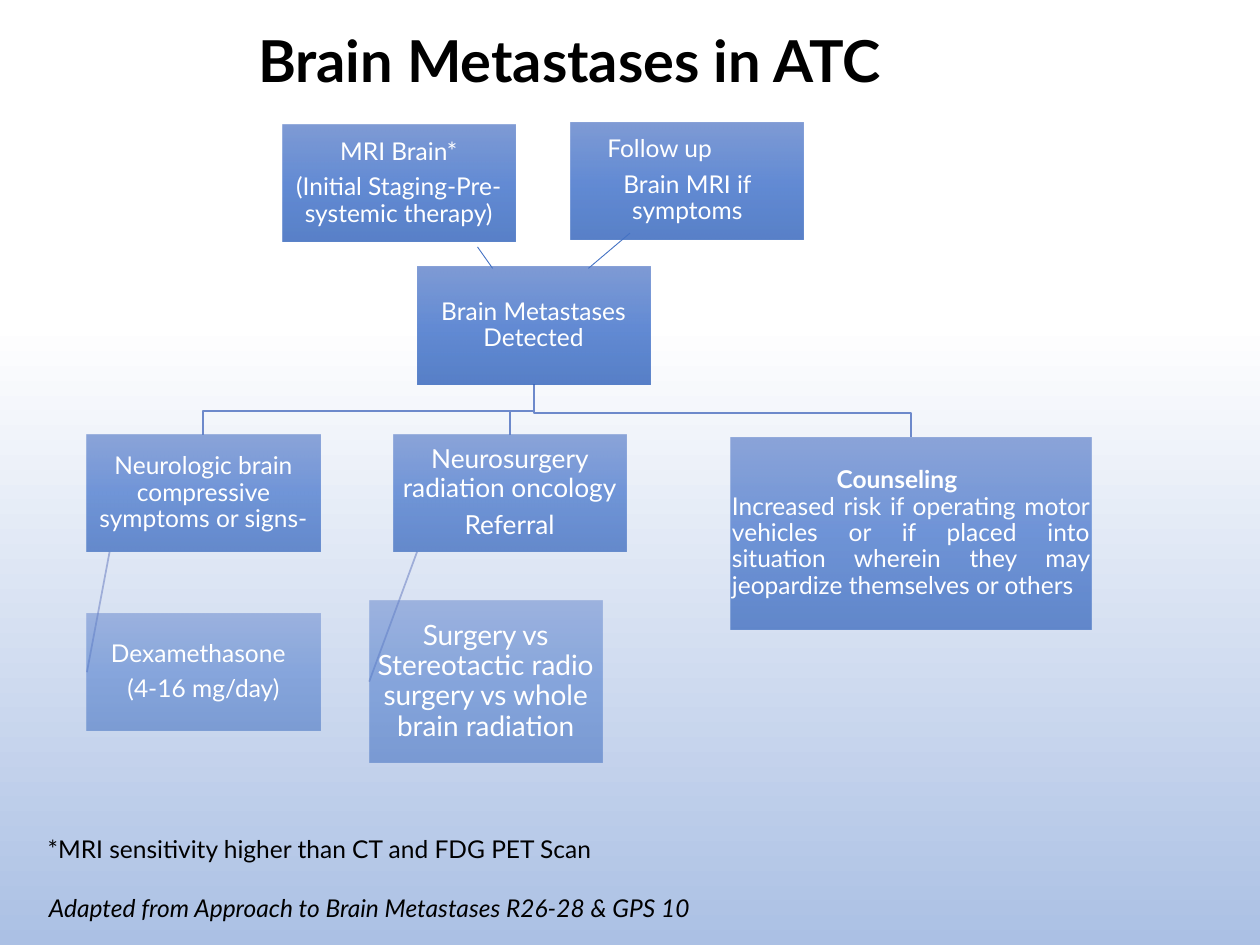
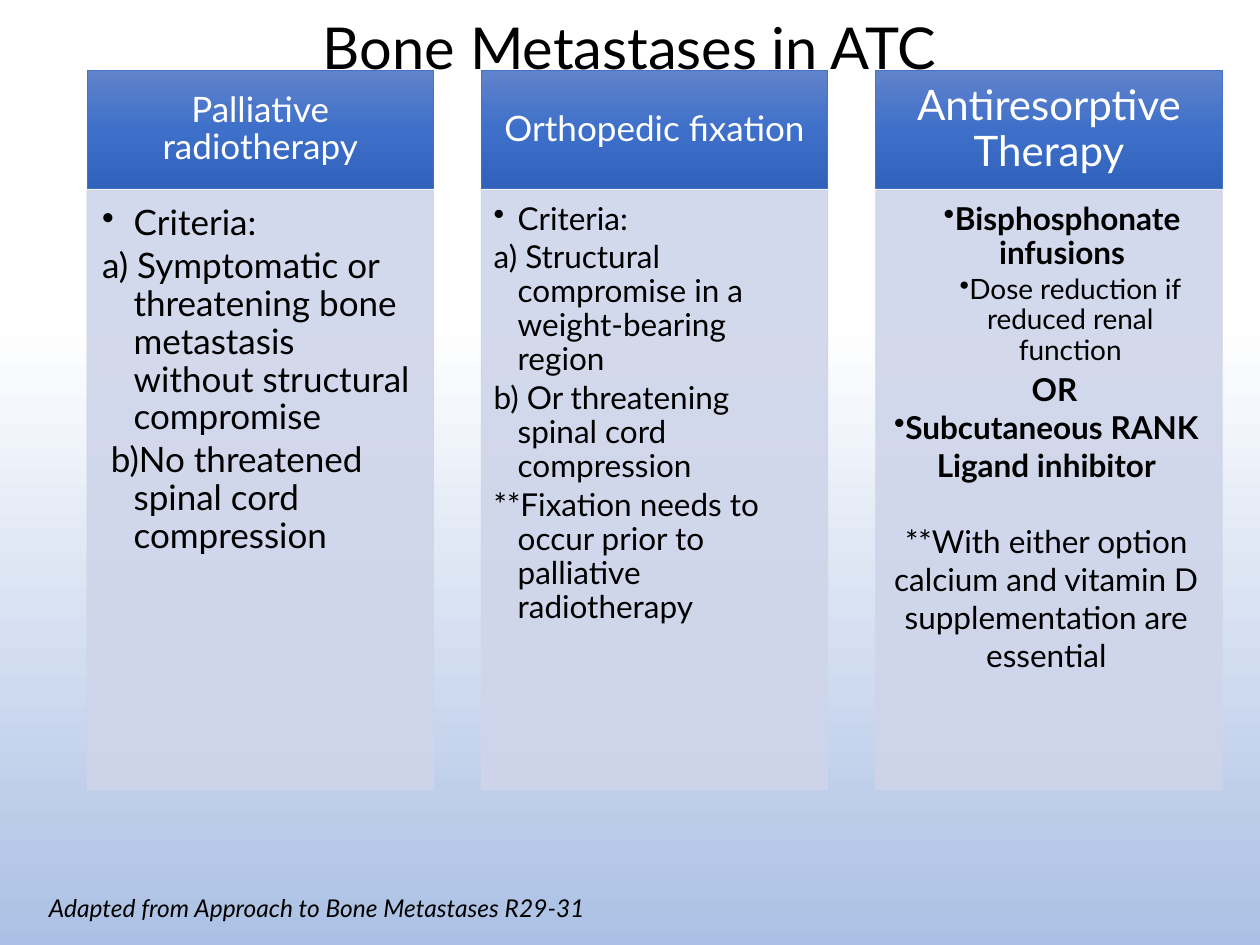
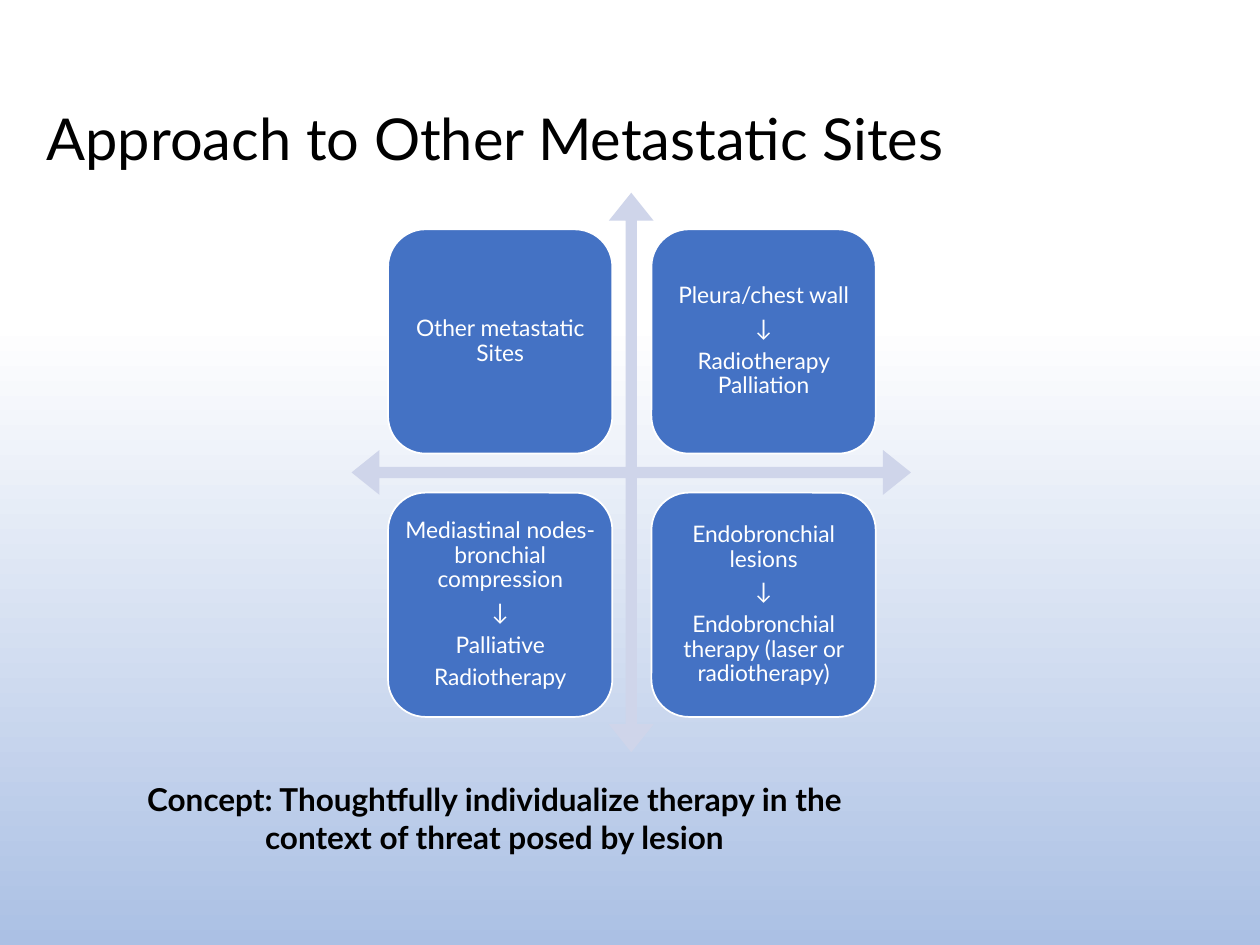
"""Build three slides on managing brain, bone and other metastases in ATC."""
from copy import deepcopy

from pptx import Presentation
from pptx.dml.color import RGBColor
from pptx.enum.shapes import MSO_CONNECTOR, MSO_SHAPE
from pptx.enum.text import MSO_ANCHOR, MSO_AUTO_SIZE, PP_ALIGN
from pptx.oxml.ns import qn
from pptx.oxml.xmlchemy import OxmlElement
from pptx.util import Inches, Pt

BLACK, WHITE, BLUE, PALE = "000000", "FFFFFF", "4472C4", "CFD5EA"
BACKDROP = {0.34: WHITE, 1: "ABC0E4"}
BLUE_FADE = {0: "6183CB", 0.5: "3E70CA", 1: "3062BB"}
BASE = {"alignment": PP_ALIGN.CENTER, "line_spacing": 0.9, "space_before": None,
        "after": 0, "left": 0, "first": 0, "bullet": None,
        "name": "Lato", "size": 14, "bold": False, "italic": False, "colour": WHITE}


def paint(fill, colours, alpha=100):
    """Fill with one hex colour, or with a downward gradient of position: hex."""
    if isinstance(colours, str):
        fill.solid()
        fill.fore_color.rgb = RGBColor.from_string(colours)
    else:
        fill.gradient()
        fill.gradient_angle = 270
        stops = fill._xPr.find(".//" + qn("a:gsLst"))
        while len(stops) < len(colours):
            stops.append(deepcopy(stops[0]))
        for stop, (position, colour) in zip(fill.gradient_stops, colours.items()):
            stop.position = position
            stop.color.rgb = RGBColor.from_string(colour)
    if alpha < 100:
        for colour in fill._xPr.iter(qn("a:srgbClr")):
            opacity = OxmlElement("a:alpha")
            opacity.set("val", str(alpha * 1000))
            colour.append(opacity)


def write(shape, lines, margins=(0.1, 0.05, 0.1, 0.05), anchor=MSO_ANCHOR.MIDDLE, **look):
    """Write paragraphs, each a string or a pair of string and own format."""
    frame = shape.text_frame
    frame.word_wrap = True
    frame.auto_size = MSO_AUTO_SIZE.NONE
    frame.vertical_anchor = anchor
    for side, margin in zip(("left", "top", "right", "bottom"), margins):
        setattr(frame, f"margin_{side}", Inches(margin))
    for number, line in enumerate(lines):
        text, own = line if isinstance(line, tuple) else (line, {})
        style = {**BASE, **look, **own}
        paragraph = frame.add_paragraph() if number else frame.paragraphs[0]
        properties = paragraph._p.get_or_add_pPr()
        properties.set("marL", str(Inches(style["left"])))
        properties.set("indent", str(Inches(style["first"])))
        bullet = OxmlElement("a:buChar" if style["bullet"] else "a:buNone")
        if style["bullet"]:
            bullet.set("char", style["bullet"])
        properties.append(bullet)
        style["space_after"] = Pt(style["after"] * style["size"])
        for name in ("alignment", "line_spacing", "space_before", "space_after"):
            setattr(paragraph, name, style[name])
        run = paragraph.add_run()
        run.text = text
        style["size"] = Pt(style["size"])
        for name in ("name", "size", "bold", "italic"):
            setattr(run.font, name, style[name])
        paint(run.font.fill, style["colour"])


prs = Presentation()
prs.slide_width, prs.slide_height = Inches(10), Inches(7.5)
paint(prs.slide_master.background.fill, BACKDROP)

titles = [
    ("Brain Metastases in ATC", (0.21, 0.09, 8.62, 0.83), {"bold": True}),
    ("Bone Metastases in ATC", (0.69, 0.04, 8.62, 0.72), {}),
    ("Approach to Other Metastatic Sites", (0.27, 0.4, 8.62, 1.45),
     {"alignment": PP_ALIGN.LEFT}),
]
for text, place, look in titles:
    title = prs.slides.add_slide(prs.slide_layouts[5]).shapes.title
    title.left, title.top, title.width, title.height = map(Inches, place)
    write(title, [text], size=33, colour=BLACK, **look)
brain, bone, other = (slide.shapes for slide in prs.slides)

detected_x, detected_bottom = 4.24, 3.05
for x, bend, bottom in [(7.23, 3.28, 3.47), (4.05, 3.26, 3.45), (1.61, 3.26, 3.45)]:
    outline = brain.build_freeform(Inches(detected_x), Inches(detected_bottom))
    corners = [(detected_x, bend), (x, bend), (x, bottom)]
    outline.add_line_segments([(Inches(a), Inches(b)) for a, b in corners], close=False)
    branch = outline.convert_to_shape()
    branch.fill.background()
    branch.shadow.inherit = False
    paint(branch.line.fill, "6D89CB")
    branch.line.width = Pt(1)

steps = [
    ((2.24, 0.99, 1.85, 0.93), 80, 14,
     ["MRI Brain*", "(Initial Staging-Pre-systemic therapy)"]),
    ((4.53, 0.97, 1.85, 0.93), 80, 14,
     [("Follow up", {"alignment": PP_ALIGN.LEFT, "left": 0.28}), "Brain MRI if symptoms"]),
    ((3.31, 2.12, 1.85, 0.93), 80, 14, ["Brain Metastases Detected"]),
    ((0.69, 3.45, 1.85, 0.93), 70, 14,
     ["Neurologic brain compressive symptoms or signs-"]),
    ((0.69, 4.87, 1.85, 0.93), 50, 14,
     [("Dexamethasone", {"alignment": PP_ALIGN.LEFT, "left": 0.18}), "(4-16 mg/day)"]),
    ((3.12, 3.45, 1.85, 0.93), 70, 15, ["Neurosurgery radiation oncology", "Referral"]),
    ((2.93, 4.77, 1.85, 1.28), 50, 16,
     ["Surgery vs Stereotactic radio surgery vs whole brain radiation"]),
    ((5.8, 3.47, 2.86, 1.53), 70, 14,
     [("Counseling", {"alignment": PP_ALIGN.LEFT, "left": 0.83, "bold": True, "after": 0}),
      ("Increased risk if operating motor vehicles or if placed into situation wherein "
       "they may jeopardize themselves or others", {"alignment": PP_ALIGN.JUSTIFY})]),
]
boxes = []
for place, alpha, size, lines in steps:
    box = brain.add_shape(MSO_SHAPE.RECTANGLE, *map(Inches, place))
    box.shadow.inherit = False
    paint(box.fill, BLUE_FADE, alpha)
    box.line.fill.background()
    write(box, lines, (0.01,) * 4, size=size, after=0.35)
    boxes.append(box)

links = [
    ((0.87, 4.38, 0.69, 5.33), "9EADD8", 1, boxes[4]),
    ((3.31, 4.38, 2.93, 5.41), "9EADD8", 1, boxes[6]),
    ((4.67, 2.13, 5, 1.85), BLUE, 0.5, None),
    ((3.79, 1.96, 3.91, 2.13), BLUE, 0.5, None),
]
for ends, colour, width, treatment in links:
    link = brain.add_connector(MSO_CONNECTOR.STRAIGHT, *map(Inches, ends))
    paint(link.line.fill, colour)
    link.line.width = Pt(width)
    link._element.spPr.append(OxmlElement("a:effectLst"))
    if treatment:
        link.end_connect(treatment, 1)
        boxes[0]._element.addprevious(link._element)

wide = {"left": 0.25, "first": -0.25}
narrow = {"left": 0.19, "first": -0.19}
centred = {"alignment": PP_ALIGN.CENTER}
loose = {**centred, "line_spacing": 1, "after": 0}
options = [
    ("Palliative radiotherapy", 20, (0.16, 0.09) * 2, 20, (0.12, 0.12, 0.16, 0.17), [
        ("Criteria:", {**wide, "bullet": "•"}),
        ("a) Symptomatic or threatening bone metastasis without structural compromise", wide),
        ("b)No threatened spinal cord compression", {"left": 0.25, "first": -0.18}),
    ]),
    ("Orthopedic fixation", 20, (0.16, 0.09) * 2, 18, (0.1, 0.1, 0.14, 0.16), [
        ("Criteria:", {**narrow, "bullet": "•"}),
        ("a) Structural compromise in a weight-bearing region", narrow),
        ("b) Or threatening spinal cord compression", narrow),
        ("**Fixation needs to occur prior to palliative radiotherapy", narrow),
    ]),
    ("Antiresorptive Therapy", 24, (0.19, 0.11) * 2, 18, (0.1, 0.1, 0.14, 0.16), [
        ("Bisphosphonate infusions", {**centred, "left": 0.25, "bullet": "•", "bold": True}),
        ("Dose reduction if reduced renal function",
         {**centred, "left": 0.38, "bullet": "•", "size": 16}),
        ("OR", {**loose, "left": 0.13, "bold": True}),
        ("Subcutaneous RANK Ligand inhibitor", {**loose, "bullet": "•", "bold": True}),
        ("**With either option calcium and vitamin D supplementation are essential",
         {**loose, "space_before": Pt(22)}),
    ]),
]
for column, (heading, head_size, head_margins, size, margins, lines) in enumerate(options):
    left = 0.69 + 3.13 * column
    parts = [
        (0.56, 0.94, BLUE_FADE, BLUE, 100, [heading], head_margins,
         {"size": head_size, "after": 0.35}),
        (1.51, 4.76, PALE, PALE, 90, lines, margins,
         {"size": size, "after": 0.15, "colour": BLACK, "alignment": PP_ALIGN.LEFT,
          "anchor": MSO_ANCHOR.TOP}),
    ]
    for top, height, fill, edge, alpha, texts, insets, look in parts:
        panel = bone.add_shape(MSO_SHAPE.RECTANGLE, *map(Inches, (left, top, 2.75, height)))
        panel.shadow.inherit = False
        paint(panel.fill, fill, alpha)
        paint(panel.line.fill, edge, alpha)
        panel.line.width = Pt(0.5)
        write(panel, texts, insets, **look)

axes = other.add_shape(MSO_SHAPE.QUAD_ARROW, *map(Inches, (2.79, 1.53, 4.44, 4.44)))
axes.shadow.inherit = False
paint(axes.fill, PALE)
axes.line.fill.background()
for number, ratio in enumerate((0.02, 0.04, 0.05)):
    axes.adjustments[number] = ratio

sites = [
    ["Other metastatic Sites"],
    ["Pleura/chest wall", "↓", "Radiotherapy Palliation"],
    ["Mediastinal nodes-bronchial compression", "↓", "Palliative", "Radiotherapy"],
    ["Endobronchial lesions", "↓", "Endobronchial therapy (laser or radiotherapy)"],
]
for number, lines in enumerate(sites):
    row, column = divmod(number, 2)
    place = (3.08 + 2.09 * column, 1.82 + 2.09 * row, 1.78, 1.78)
    site = other.add_shape(MSO_SHAPE.ROUNDED_RECTANGLE, *map(Inches, place))
    site.shadow.inherit = False
    paint(site.fill, BLUE)
    paint(site.line.fill, WHITE)
    site.line.width = Pt(1)
    write(site, lines, (0.05,) * 4, size=13, after=0.35)

notes = [
    (brain, (0.28, 6.57, 6.27, 0.34), "*MRI sensitivity higher than CT and FDG PET Scan", {}),
    (brain, (0.29, 7.04, 6.27, 0.34),
     "Adapted from Approach to Brain Metastases R26-28 & GPS 10", {"italic": True}),
    (bone, (0.29, 7.04, 6.27, 0.34),
     "Adapted from Approach to Bone Metastases R29-31", {"italic": True}),
    (other, (1.06, 6.14, 5.73, 0.71),
     "Concept: Thoughtfully individualize therapy in the context of threat posed by lesion",
     {"alignment": PP_ALIGN.CENTER, "size": 18, "bold": True}),
]
for shapes, place, text, own in notes:
    note = shapes.add_textbox(*map(Inches, place))
    look = {"alignment": PP_ALIGN.LEFT, "line_spacing": 1, "colour": BLACK, **own}
    write(note, [text], anchor=MSO_ANCHOR.TOP, **look)

prs.save("out.pptx")
